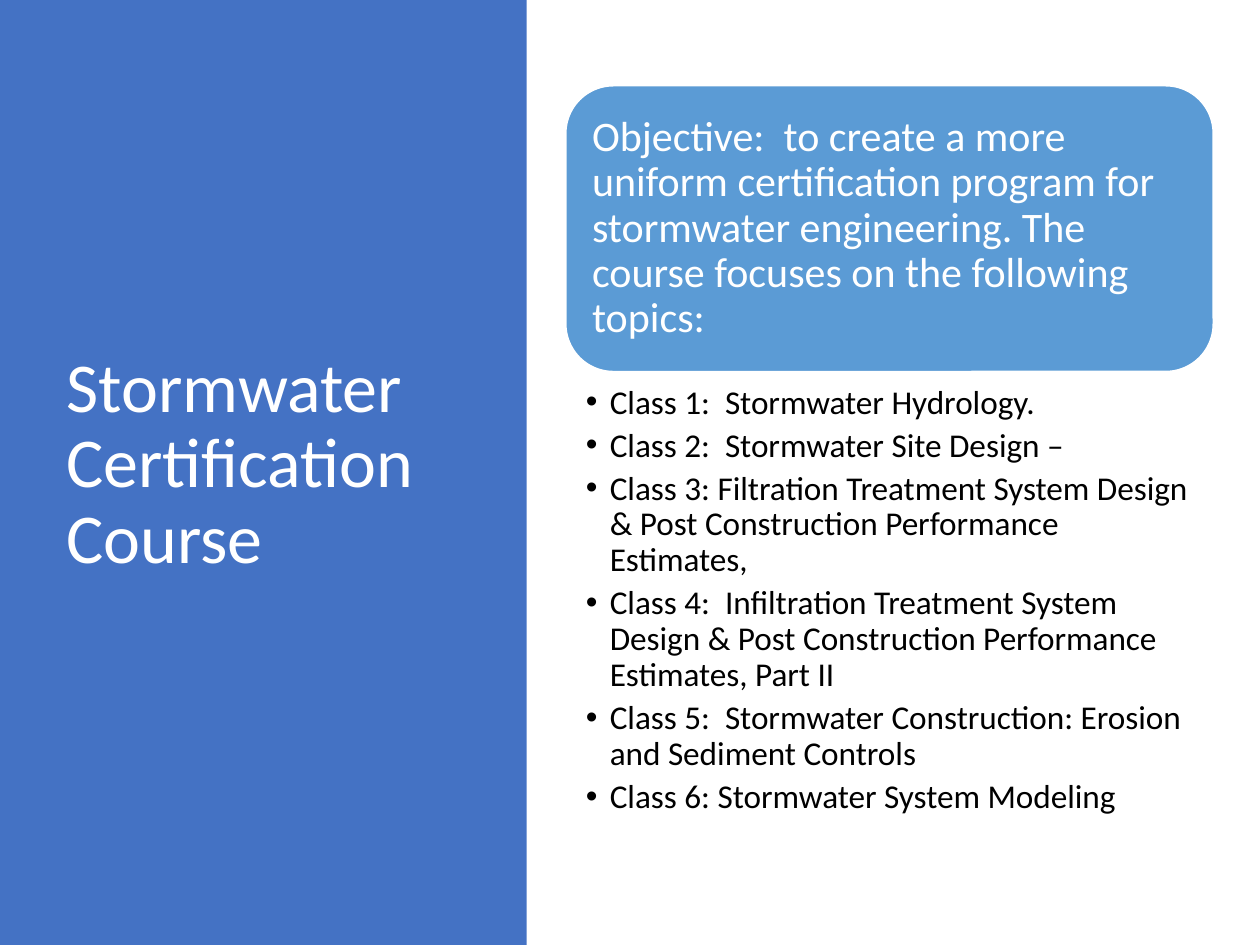
"""Build the Stormwater Certification Course slide."""
import pptx
import pptx.dml.color
import pptx.enum.shapes
import pptx.enum.text
import pptx.oxml
import pptx.oxml.ns
import pptx.util

Inches = pptx.util.Inches
Pt = pptx.util.Pt
RGBColor = pptx.dml.color.RGBColor
Shape = pptx.enum.shapes.MSO_SHAPE
Anchor = pptx.enum.text.MSO_ANCHOR
Align = pptx.enum.text.PP_ALIGN

WHITE = RGBColor(0xFF, 0xFF, 0xFF)
BLACK = RGBColor(0x00, 0x00, 0x00)
PANEL_BLUE = RGBColor(0x44, 0x72, 0xC4)
CARD_BLUE = RGBColor(0x5B, 0x9B, 0xD5)

TITLE = "Stormwater Certification Course"
OBJECTIVE = (
    "Objective:  to create a more uniform certification program for "
    "stormwater engineering. The course focuses on the following topics:"
)
CLASSES = [
    "Class 1:  Stormwater Hydrology.",
    "Class 2:  Stormwater Site Design –",
    "Class 3: Filtration Treatment System Design & Post Construction "
    "Performance Estimates,",
    "Class 4:  Infiltration Treatment System Design & Post Construction "
    "Performance Estimates, Part II",
    "Class 5:  Stormwater Construction: Erosion and Sediment Controls",
    "Class 6: Stormwater System Modeling",
]


class SlideBuilder:
    font_name = "Calibri"
    line_spacing = 0.9
    bullet_indent = Inches(0.19)

    def __init__(self, slide):
        self.slide = slide

    def add_block(self, kind, box, fill, line=None):
        shape = self.slide.shapes.add_shape(kind, *map(Inches, box))
        shape.shadow.inherit = False
        shape.fill.solid()
        shape.fill.fore_color.rgb = fill
        if line is None:
            shape.line.fill.background()
        else:
            shape.line.color.rgb = line
            shape.line.width = Pt(1)
        return shape

    def add_text_box(self, box):
        return self.slide.shapes.add_textbox(*map(Inches, box))

    def set_text(self, shape, text, size, color, insets=(0.1, 0.05, 0.1, 0.05),
                 anchor=Anchor.MIDDLE, space_after=0, bulleted=False):
        frame = shape.text_frame
        frame.word_wrap = True
        frame.vertical_anchor = anchor
        (frame.margin_left, frame.margin_top,
         frame.margin_right, frame.margin_bottom) = map(Inches, insets)
        frame.text = text
        for paragraph in frame.paragraphs:
            paragraph.alignment = Align.LEFT
            paragraph.line_spacing = self.line_spacing
            paragraph.space_after = Pt(space_after)
            if bulleted:
                self.add_bullet(paragraph)
            for run in paragraph.runs:
                run.font.name = self.font_name
                run.font.size = Pt(size)
                run.font.color.rgb = color

    def add_bullet(self, paragraph):
        paragraph.level = 1
        properties = paragraph._p.get_or_add_pPr()
        properties.set("marL", str(self.bullet_indent))
        properties.set("indent", str(-self.bullet_indent))
        namespace = pptx.oxml.ns.nsdecls("a")
        properties.append(pptx.oxml.parse_xml(f'<a:buFont {namespace} typeface="Arial"/>'))
        properties.append(pptx.oxml.parse_xml(f'<a:buChar {namespace} char="•"/>'))


def main():
    presentation = pptx.Presentation()
    presentation.slide_width = Inches(10)
    presentation.slide_height = Inches(7.5)
    builder = SlideBuilder(presentation.slides.add_slide(presentation.slide_layouts[6]))

    builder.add_block(Shape.RECTANGLE, (0, 0, 4.18, 7.5), PANEL_BLUE)
    title = builder.add_text_box((0.43, 0.68, 3.12, 6.02))
    builder.set_text(title, TITLE, 40, WHITE)

    card = builder.add_block(
        Shape.ROUNDED_RECTANGLE, (4.49, 0.68, 5.14, 2.27), CARD_BLUE, WHITE)
    builder.set_text(card, OBJECTIVE, 24, WHITE, insets=(0.1, 0.1, 0.1, 0.1))

    class_list = builder.add_text_box((4.49, 3.03, 5.14, 3.59))
    builder.set_text(class_list, "\n".join(CLASSES), 19, BLACK,
                     insets=(0.16, 0.03, 0.19, 0.03), anchor=Anchor.TOP,
                     space_after=4, bulleted=True)

    presentation.save("out.pptx")


if __name__ == "__main__":
    main()
